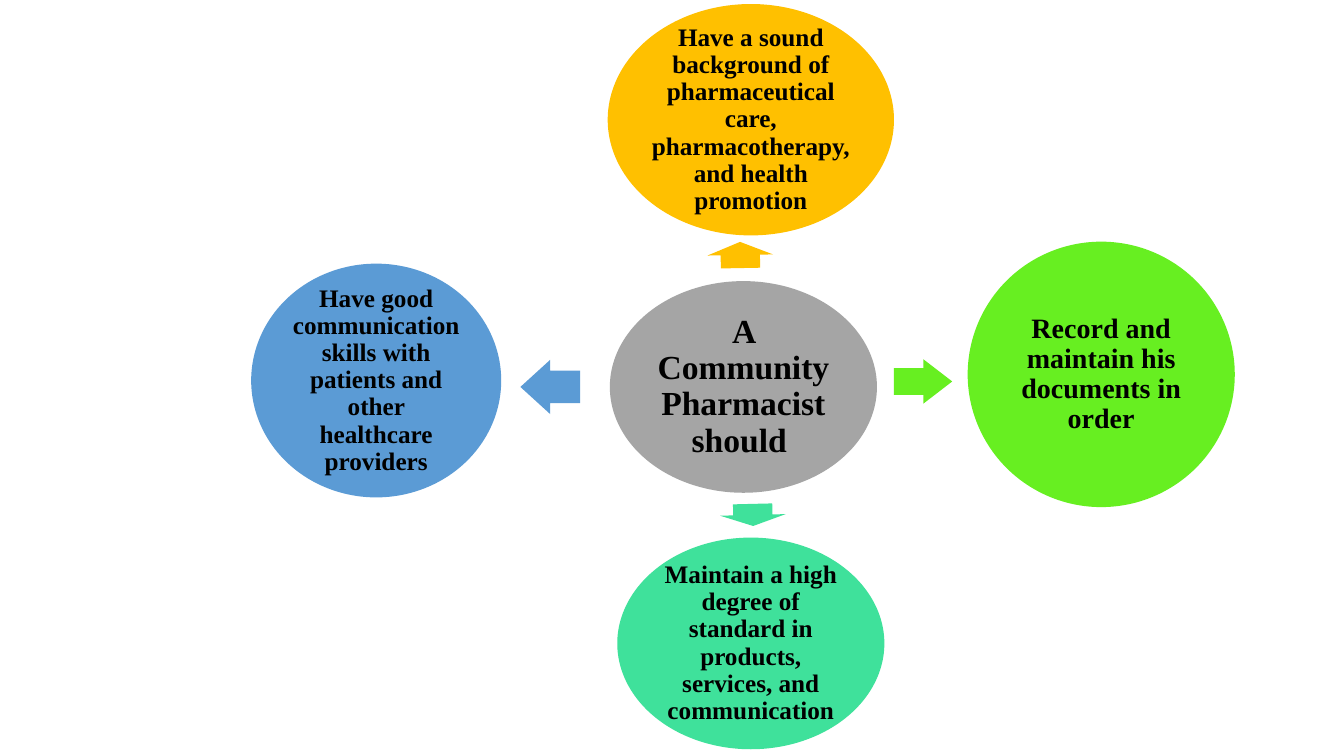
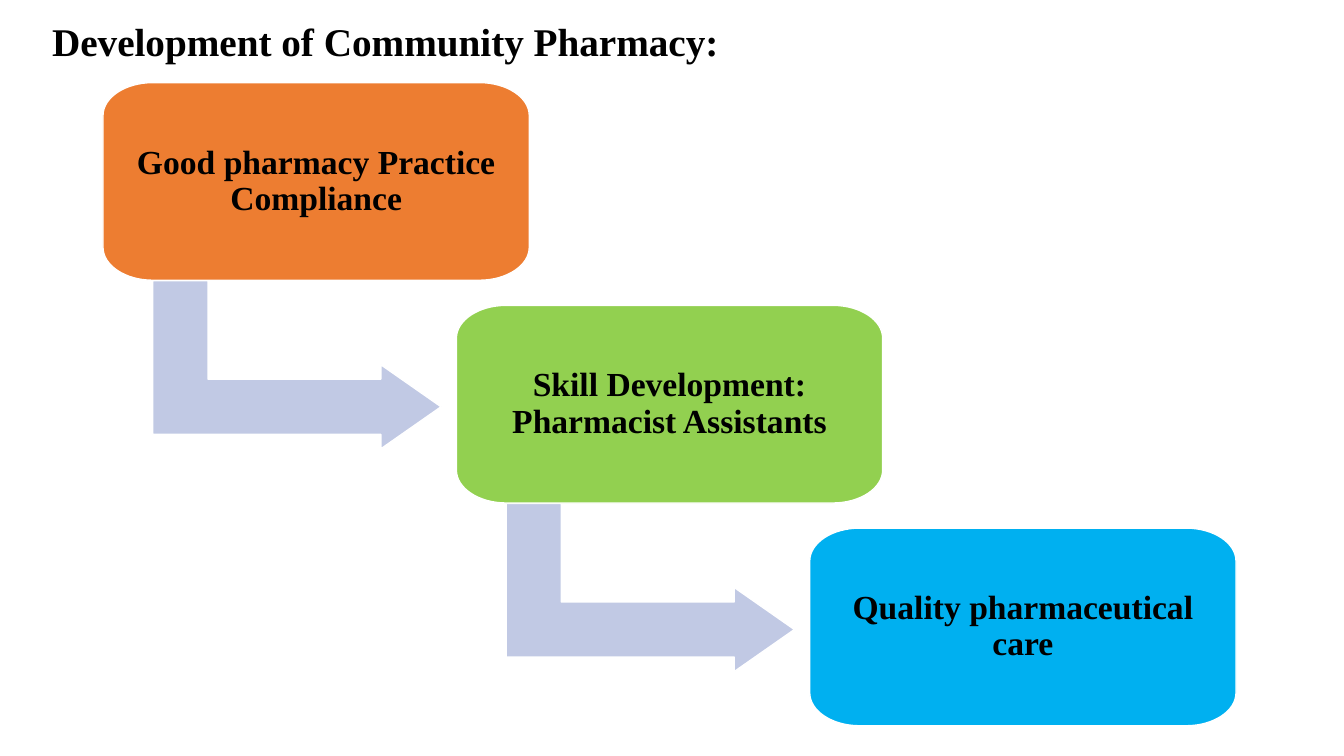
from dataclasses import dataclass

from lxml import etree
from pptx import Presentation
from pptx.dml.color import RGBColor
from pptx.enum import shapes, text
from pptx.oxml import ns
from pptx.util import Pt

# Shared look
FONT = "Times New Roman"
BLACK = RGBColor(0x00, 0x00, 0x00)
WHITE = RGBColor(0xFF, 0xFF, 0xFF)
GRAY = RGBColor(0xA5, 0xA5, 0xA5)
GOLD = RGBColor(0xFF, 0xC0, 0x00)
LIME = RGBColor(0x67, 0xEF, 0x21)
MINT = RGBColor(0x3F, 0xE1, 0x9B)
BLUE = RGBColor(0x5B, 0x9B, 0xD5)
ORANGE = RGBColor(0xED, 0x7D, 0x31)
GREEN = RGBColor(0x92, 0xD0, 0x50)
SKY = RGBColor(0x00, 0xB0, 0xF0)
LAVENDER = RGBColor(0xC1, 0xC9, 0xE4)
TITLE_AND_BODY, BLANK = 1, 6
LINE_SPACING = 0.9


@dataclass(frozen=True)
class Area:
    left: float
    top: float
    width: float
    height: float

    def lengths(self) -> tuple:
        return Pt(self.left), Pt(self.top), Pt(self.width), Pt(self.height)


@dataclass(frozen=True)
class Bubble:
    words: str
    area: Area
    color: RGBColor
    size: float
    inset: float


@dataclass(frozen=True)
class Arrow:
    kind: shapes.MSO_SHAPE
    area: Area
    color: RGBColor
    adjustments: tuple
    rotation: float = 0


@dataclass(frozen=True)
class Step:
    words: str
    color: RGBColor


# Slide 1: the hub, its four duties and the arrows between them
BUBBLES = (
    Bubble("A Community Pharmacist should ",
           Area(435.6, 200.8, 190.8, 151.2), GRAY, 24, 2.3),
    Bubble("Have a sound background of pharmaceutical care, "
           "pharmacotherapy, and health promotion",
           Area(434.1, 2.9, 204.5, 165.3), GOLD, 18, 0),
    Bubble("Record and maintain his documents in order",
           Area(691.2, 172.6, 190.8, 189.6), LIME, 20, 1),
    Bubble("Maintain a high degree of standard in products, services, "
           "and communication",
           Area(440.9, 384, 190.8, 151.2), MINT, 18, 0),
    Bubble("Have good communication skills with patients and other "
           "healthcare providers",
           Area(179.4, 188.3, 178.6, 167), BLUE, 18, 2),
)
SPOKES = (
    Arrow(shapes.MSO_SHAPE.UP_ARROW,
          Area(505.4, 172.8, 46.8, 18.7), GOLD, (0.6, 0.5), -1),
    Arrow(shapes.MSO_SHAPE.RIGHT_ARROW,
          Area(638.6, 256.6, 41.6, 31.8), LIME, (0.6, 0.65)),
    Arrow(shapes.MSO_SHAPE.DOWN_ARROW,
          Area(514.4, 359.9, 46.8, 15.8), MINT, (0.6, 0.5), -1.4),
    Arrow(shapes.MSO_SHAPE.LEFT_ARROW,
          Area(371.7, 257, 42.6, 38.8), BLUE, (0.6, 0.55)),
)

# Slide 2: a heading above a staircase of boxes
HEADING = "Development of Community Pharmacy:"
HEADING_AREA = Area(30, 12.6, 910, 513.4)
STEPS = (
    Step("Good pharmacy Practice Compliance", ORANGE),
    Step("Skill Development: Pharmacist Assistants", GREEN),
    Step("Quality pharmaceutical care", SKY),
)
FIRST_BOX = Area(73.6, 59, 304.5, 141.2)
STEP_RIGHT, STEP_DOWN = 252.4, 159.1
CORNER_WIDTH, CORNER_HEIGHT = 35.5, 23.5
CURVE_PULL = 0.55
BOX_INSET = 13.7
BEND_OFFSET_X, BEND_OFFSET_Y = 78.4, 98.6
BEND_WIDTH, BEND_HEIGHT = 120.2, 205.9
BEND_ADJUSTMENTS = (0.328, 0.25, 0.358)


def paint(shape, color: RGBColor, outlined: bool = False) -> None:
    """Give a shape a flat fill and a thin white outline, or none."""
    shape.shadow.inherit = False
    shape.fill.solid()
    shape.fill.fore_color.rgb = color
    if outlined:
        shape.line.color.rgb = WHITE
        shape.line.width = Pt(1)
    else:
        shape.line.fill.background()


def write(frame, words: str, size: float, align: text.PP_ALIGN):
    """Write one bold paragraph and return it."""
    frame.word_wrap = True
    frame.auto_size = text.MSO_AUTO_SIZE.NONE
    para = frame.paragraphs[0]
    para.alignment = align
    para.line_spacing = LINE_SPACING
    span = para.add_run()
    span.text = words
    span.font.name = FONT
    span.font.size = Pt(size)
    span.font.bold = True
    span.font.color.rgb = BLACK
    return para


def label(shape, words: str, size: float, inset: float) -> None:
    """Centre a label inside a shape."""
    frame = shape.text_frame
    frame.vertical_anchor = text.MSO_ANCHOR.MIDDLE
    frame.margin_left = frame.margin_right = Pt(inset)
    frame.margin_top = frame.margin_bottom = Pt(inset)
    write(frame, words, size, text.PP_ALIGN.CENTER)


def draw_bubble(page, bubble: Bubble) -> None:
    oval = page.shapes.add_shape(shapes.MSO_SHAPE.OVAL, *bubble.area.lengths())
    paint(oval, bubble.color)
    label(oval, bubble.words, bubble.size, bubble.inset)


def draw_arrow(page, arrow: Arrow, outlined: bool = False) -> None:
    shape = page.shapes.add_shape(arrow.kind, *arrow.area.lengths())
    for index, value in enumerate(arrow.adjustments):
        shape.adjustments[index] = value
    shape.rotation = arrow.rotation
    paint(shape, arrow.color, outlined)


def box_outline(area: Area) -> list:
    """Ends of the four corners, clockwise from the left side."""
    right, bottom = area.left + area.width, area.top + area.height
    inner_left, inner_right = area.left + CORNER_WIDTH, right - CORNER_WIDTH
    inner_top, inner_bottom = area.top + CORNER_HEIGHT, bottom - CORNER_HEIGHT
    ends = ((area.left, inner_top), (inner_left, area.top),
            (inner_right, area.top), (right, inner_top),
            (right, inner_bottom), (inner_right, bottom),
            (inner_left, bottom), (area.left, inner_bottom))
    return [(Pt(x), Pt(y)) for x, y in ends]


def round_corners(box) -> None:
    """Turn each slanted corner line of an outline into a curve."""
    outline = box.element.find(".//" + ns.qn("a:path"))
    points = [(int(point.get("x")), int(point.get("y")))
              for point in outline.iter(ns.qn("a:pt"))]
    lines = outline.findall(ns.qn("a:lnTo"))
    for index in range(0, 8, 2):
        (x0, y0), (x1, y1) = points[index:index + 2]
        # The curve leaves a vertical side and a horizontal side in turn
        tip_x, tip_y = (x0, y1) if index % 4 == 0 else (x1, y0)
        curve = etree.Element(ns.qn("a:cubicBezTo"))
        for x, y in ((x0, y0), (x1, y1)):
            etree.SubElement(curve, ns.qn("a:pt"),
                             x=str(round(x + CURVE_PULL * (tip_x - x))),
                             y=str(round(y + CURVE_PULL * (tip_y - y))))
        etree.SubElement(curve, ns.qn("a:pt"), x=str(x1), y=str(y1))
        outline.replace(lines[index], curve)


def draw_step(page, step: Step, area: Area) -> None:
    start, *others = box_outline(area)
    builder = page.shapes.build_freeform(*start)
    builder.add_line_segments(others, close=True)
    box = builder.convert_to_shape()
    round_corners(box)
    paint(box, step.color, outlined=True)
    label(box, step.words, 24, BOX_INSET)


def draw_heading(page) -> None:
    """Write the heading in the body placeholder, without a bullet."""
    title = page.shapes.title.element
    title.getparent().remove(title)
    body = page.placeholders[1]
    body.left, body.top, body.width, body.height = HEADING_AREA.lengths()
    para = write(body.text_frame, HEADING, 28, text.PP_ALIGN.LEFT)
    para.space_before = Pt(10)
    properties = para._p.get_or_add_pPr()
    properties.set("marL", "0")
    properties.set("indent", "0")
    etree.SubElement(properties, ns.qn("a:buNone"))


def build_duties(deck) -> None:
    page = deck.slides.add_slide(deck.slide_layouts[BLANK])
    for bubble in BUBBLES:
        draw_bubble(page, bubble)
    for spoke in SPOKES:
        draw_arrow(page, spoke)


def build_development(deck) -> None:
    page = deck.slides.add_slide(deck.slide_layouts[TITLE_AND_BODY])
    draw_heading(page)
    for index, step in enumerate(STEPS):
        area = Area(FIRST_BOX.left + index * STEP_RIGHT,
                    FIRST_BOX.top + index * STEP_DOWN,
                    FIRST_BOX.width, FIRST_BOX.height)
        # A bent arrow leads from each box to the next one
        if index < len(STEPS) - 1:
            bend = Area(area.left + BEND_OFFSET_X, area.top + BEND_OFFSET_Y,
                        BEND_WIDTH, BEND_HEIGHT)
            draw_arrow(page, Arrow(shapes.MSO_SHAPE.BENT_UP_ARROW, bend,
                                   LAVENDER, BEND_ADJUSTMENTS, 90), outlined=True)
        draw_step(page, step, area)


def main() -> None:
    deck = Presentation()
    deck.slide_width, deck.slide_height = Pt(960), Pt(540)
    build_duties(deck)
    build_development(deck)
    deck.save("out.pptx")


if __name__ == "__main__":
    main()
